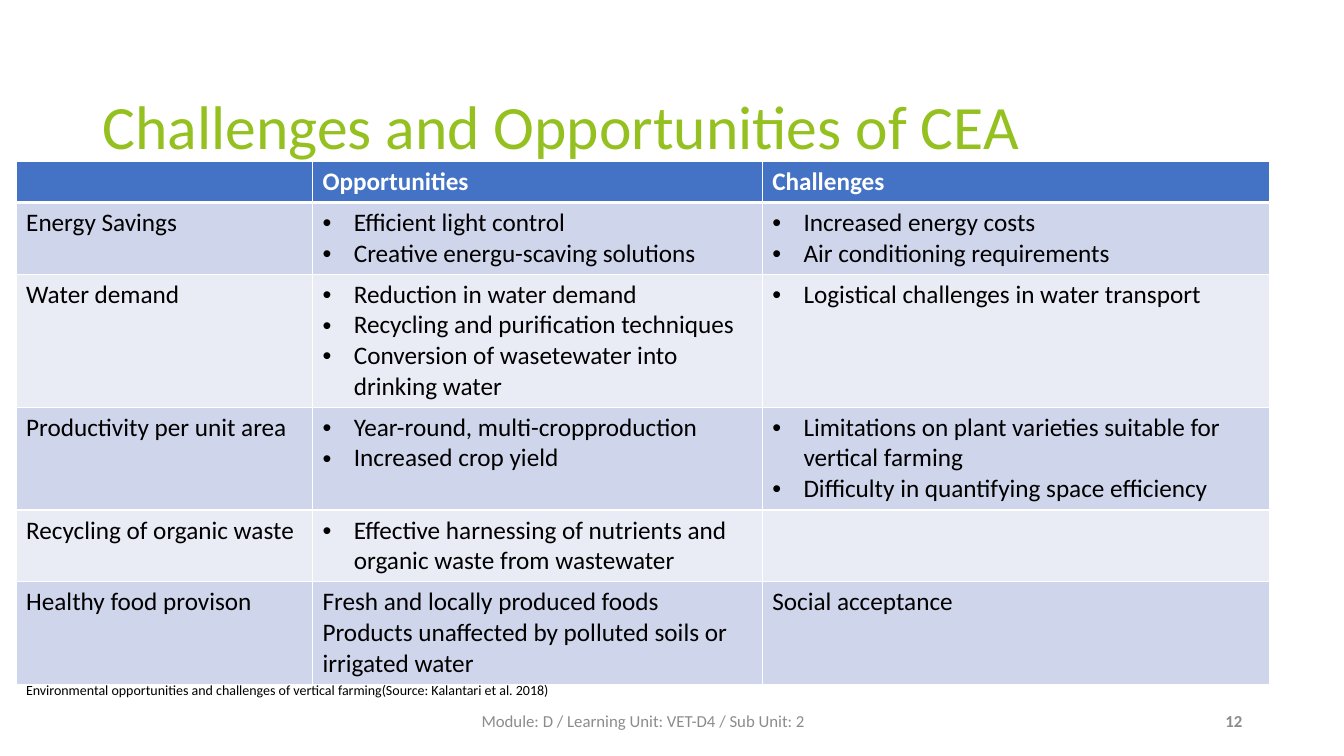
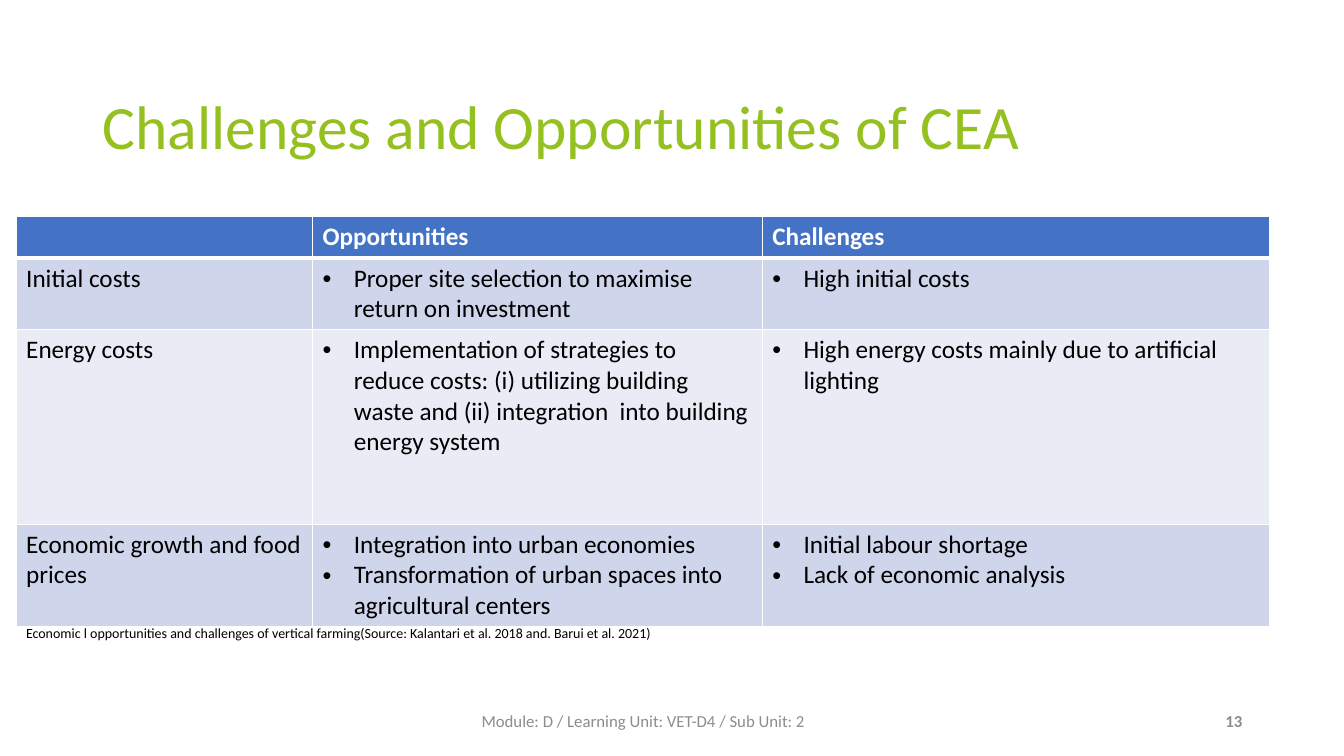
from lxml.etree import SubElement as Sub
from pptx import Presentation
from pptx.dml.color import RGBColor as RGB
from pptx.enum.text import MSO_ANCHOR as Anchor, PP_ALIGN as Align
from pptx.oxml.ns import qn
from pptx.util import Emu, Pt

PX = 9144
FONT = "Calibri"
GREEN, BLUE, GREY = "94C020", "4472C4", "8C8C8C"
BLACK, WHITE = "000000", "FFFFFF"
BANDS = ["CFD5EA", "E9EBF5"]
TITLE = "Challenges and Opportunities of CEA"
FOOT = "Module: D / Learning Unit: VET-D4 / Sub Unit: 2"
HEAD = ("", "Opportunities", "Challenges")
COLS = [294, 446, 503]
LEFT = 16
INDENT = 31

pages = [
    {
        "num": "12",
        "top": 160,
        "highs": [41, 71, 132, 102, 71, 102],
        "rows": [
            HEAD,
            ("Energy Savings",
             ["Efficient light control", "Creative energu-scaving solutions"],
             ["Increased energy costs", "Air conditioning requirements"]),
            ("Water demand",
             ["Reduction in water demand",
              "Recycling and purification techniques",
              "Conversion of wasetewater into drinking water"],
             ["Logistical challenges in water transport"]),
            ("Productivity per unit area",
             ["Year-round, multi-cropproduction", "Increased crop yield"],
             ["Limitations on plant varieties suitable for vertical farming",
              "Difficulty in quantifying space efficiency"]),
            ("Recycling of organic waste",
             ["Effective harnessing of nutrients and organic waste from wastewater"],
             ""),
            ("Healthy food provison",
             "Fresh and locally produced foods\n"
             "Products unaffected by polluted soils or irrigated water",
             "Social acceptance"),
        ],
        "note": "Environmental opportunities and challenges of vertical farming"
                "(Source: Kalantari et al. 2018)",
        "base": 671,
        "wide": 580,
    },
    {
        "num": "13",
        "top": 215,
        "highs": [41, 71, 193, 102],
        "rows": [
            HEAD,
            ("Initial costs",
             ["Proper site selection to maximise return on investment"],
             ["High initial costs"]),
            ("Energy costs",
             ["Implementation of strategies to reduce costs: (i) utilizing building "
              "waste and (ii) integration  into building energy system"],
             ["High energy costs mainly due to artificial lighting"]),
            ("Economic growth and food prices",
             ["Integration into urban economies",
              "Transformation of urban spaces into agricultural centers"],
             ["Initial labour shortage", "Lack of economic analysis"]),
        ],
        "note": "Economic l opportunities and challenges of vertical farming"
                "(Source: Kalantari et al. 2018 and. Barui et al. 2021)",
        "base": 615,
        "wide": 1243,
    },
]


def write(para, text, size, color, bold=False):
    run = para.add_run()
    run.text = text
    font = run.font
    font.name, font.size, font.bold = FONT, Pt(size), bold
    font.color.rgb = RGB.from_string(color)


def label(slide, area, text, size, color, align=Align.LEFT, anchor=Anchor.MIDDLE, bold=False):
    box = slide.shapes.add_textbox(*[Emu(n * PX) for n in area])
    frame = box.text_frame
    frame.word_wrap = True
    frame.vertical_anchor = anchor
    para = frame.paragraphs[0]
    para.alignment = align
    write(para, text, size, color, bold)
    return para


deck = Presentation()
deck.slide_width, deck.slide_height = Emu(1333 * PX), Emu(750 * PX)

for page in pages:
    slide = deck.slides.add_slide(deck.slide_layouts[6])
    title = label(slide, (92, 74, 1150, 110), TITLE, 44, GREEN)
    title.line_spacing = 0.9

    rows, highs = page["rows"], page["highs"]
    area = (LEFT, page["top"], sum(COLS), sum(highs))
    table = slide.shapes.add_table(
        len(rows), len(COLS), *[Emu(n * PX) for n in area]).table
    for col, wide in zip(table.columns, COLS):
        col.width = Emu(wide * PX)
    for row, high in zip(table.rows, highs):
        row.height = Emu(high * PX)

    for r, row in enumerate(rows):
        top = r == 0
        for c, item in enumerate(row):
            cell = table.cell(r, c)
            cell.fill.solid()
            cell.fill.fore_color.rgb = RGB.from_string(BLUE if top else BANDS[(r - 1) % 2])
            props = cell._tc.get_or_add_tcPr()
            for i, side in enumerate(["lnL", "lnR", "lnT", "lnB"]):
                thick = (r, side) in [(0, "lnB"), (1, "lnT")]
                line = Sub(props, qn("a:" + side), w=str(Pt(3 if thick else 1)))
                fill = Sub(line, qn("a:solidFill"))
                Sub(fill, qn("a:srgbClr"), val=WHITE)
                props.insert(i, line)

            dots = isinstance(item, list)
            texts = item if dots else item.split("\n")
            frame = cell.text_frame
            for i, text in enumerate(texts):
                para = frame.add_paragraph() if i else frame.paragraphs[0]
                if dots:
                    form = para._p.get_or_add_pPr()
                    form.set("marL", str(INDENT * PX))
                    form.set("indent", str(-INDENT * PX))
                    Sub(form, qn("a:buFont"), typeface="Arial")
                    Sub(form, qn("a:buChar"), char="•")
                if text:
                    write(para, text, 18, WHITE if top else BLACK, top)

    label(slide, (92, 682, 1092, 66), FOOT, 12, GREY, Align.CENTER)
    label(slide, (1192, 695, 50, 40), page["num"], 12, GREY, Align.RIGHT, bold=True)
    label(slide, (LEFT, page["base"], page["wide"], 27), page["note"], 10, BLACK,
          anchor=Anchor.TOP)

deck.save("out.pptx")
